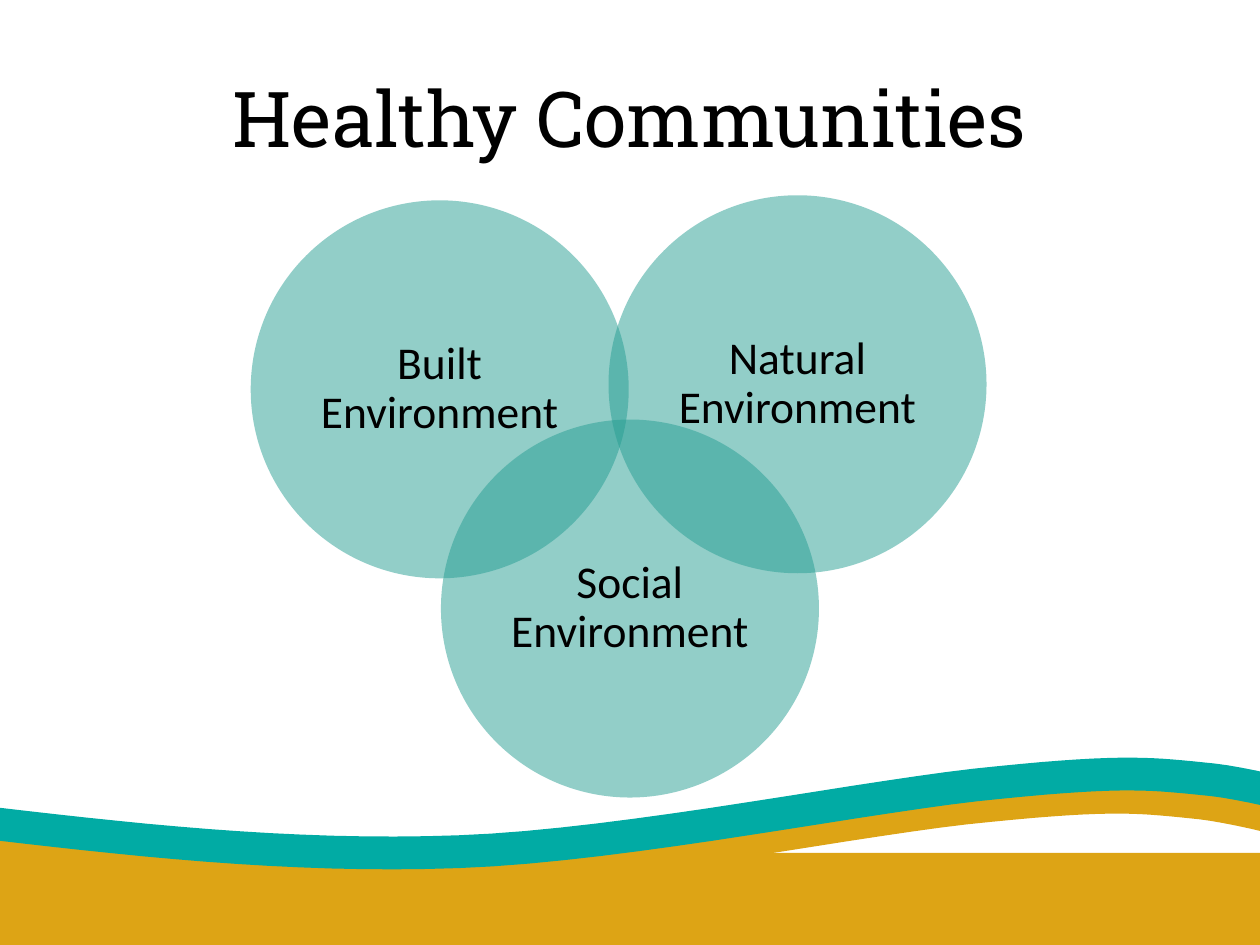
import pptx
import pptx.dml.color
import pptx.enum.shapes
import pptx.enum.text
import pptx.oxml
import pptx.oxml.ns
import pptx.util
from pptx.util import Inches

TEAL, GOLD, GREEN, BLACK = "01ABA4", "DDA415", "269E93", "000000"
STEPS = 16
START = (-0.28, 6.51)
CURVES = [
    [(1, 6.66), (2.27, 6.81), (3.64, 6.76)],
    [(5.01, 6.71), (6.94, 6.3), (7.94, 6.21)],
    [(8.94, 6.11), (9.14, 6.14), (9.63, 6.19)],
    [(10.12, 6.25), (11.01, 6.52), (10.89, 6.52)],
]


def paint(hue):
    return pptx.dml.color.RGBColor.from_string(hue)


def assign(item, **values):
    for name, value in values.items():
        setattr(item, name, value)


def blend(a, b, c, d, t):
    u = 1 - t
    return u**3 * a + 3 * u * u * t * b + 3 * u * t * t * c + t**3 * d


def trace():
    points = [START]
    for curve in CURVES:
        knots = [points[-1], *curve]
        points += [
            tuple(blend(*axis, step / STEPS) for axis in zip(*knots))
            for step in range(1, STEPS + 1)
        ]
    return points


class Deck:
    heading = {"name": "Roboto Slab", "size": pptx.util.Pt(44)}
    label = {"name": "Calibri", "size": pptx.util.Pt(26)}

    def __init__(self):
        self.file = pptx.Presentation()
        assign(self.file, slide_width=Inches(10), slide_height=Inches(7.5))
        self.slide = self.file.slides.add_slide(self.file.slide_layouts[5])

    def letter(self, shape, text, style, inset, space):
        frame = shape.text_frame
        frame.text = text
        sides = ("left", "top", "right", "bottom")
        assign(frame, word_wrap=True,
               vertical_anchor=pptx.enum.text.MSO_ANCHOR.MIDDLE,
               **{f"margin_{side}": Inches(inset) for side in sides})
        line = frame.paragraphs[0]
        assign(line, alignment=pptx.enum.text.PP_ALIGN.CENTER, line_spacing=space)
        assign(line.font, **style)
        line.font.color.rgb = paint(BLACK)

    def title(self, text, left, top, width, height):
        shape = self.slide.shapes.title
        assign(shape, left=Inches(left), top=Inches(top),
               width=Inches(width), height=Inches(height))
        self.letter(shape, text, self.heading, 0.1, 1.0)

    def solid(self, kind, left, top, width, height, hue):
        shape = self.slide.shapes.add_shape(
            kind, Inches(left), Inches(top), Inches(width), Inches(height))
        shape.shadow.inherit = False
        shape.fill.solid()
        shape.fill.fore_color.rgb = paint(hue)
        shape.line.fill.background()
        return shape

    def band(self, left, top, width, height, hue):
        self.solid(pptx.enum.shapes.MSO_SHAPE.RECTANGLE, left, top, width, height, hue)

    def wave(self, right, down, hue, weight):
        points = [(Inches(x + right), Inches(y + down)) for x, y in trace()]
        curve = self.slide.shapes.build_freeform(*points[0])
        curve.add_line_segments(points[1:], close=False)
        shape = curve.convert_to_shape()
        shape.shadow.inherit = False
        shape.fill.background()
        shape.line.color.rgb = paint(hue)
        shape.line.width = pptx.util.Pt(weight)

    def circle(self, text, left, top, size):
        shape = self.solid(pptx.enum.shapes.MSO_SHAPE.OVAL, left, top, size, size, GREEN)
        tint = shape.element.spPr.find(".//" + pptx.oxml.ns.qn("a:srgbClr"))
        alpha = pptx.oxml.parse_xml(
            f'<a:alpha {pptx.oxml.ns.nsdecls("a")} val="50000"/>')
        tint.append(alpha)
        self.letter(shape, text, self.label, 0.11, 0.9)


def main():
    deck = Deck()
    deck.band(-0.12, 6.77, 10.24, 0.73, GOLD)
    deck.wave(-0.09, 0.13, GOLD, 26.5)
    deck.wave(0, 0, TEAL, 18.75)
    deck.title("Healthy Communities", 0.5, 0.3, 9, 1.25)
    for name, left, top in [("Built", 1.99, 1.59), ("Social", 3.5, 3.33),
                            ("Natural", 4.83, 1.55)]:
        deck.circle(f"{name} Environment", left, top, 3)
    deck.file.save("out.pptx")


if __name__ == "__main__":
    main()
